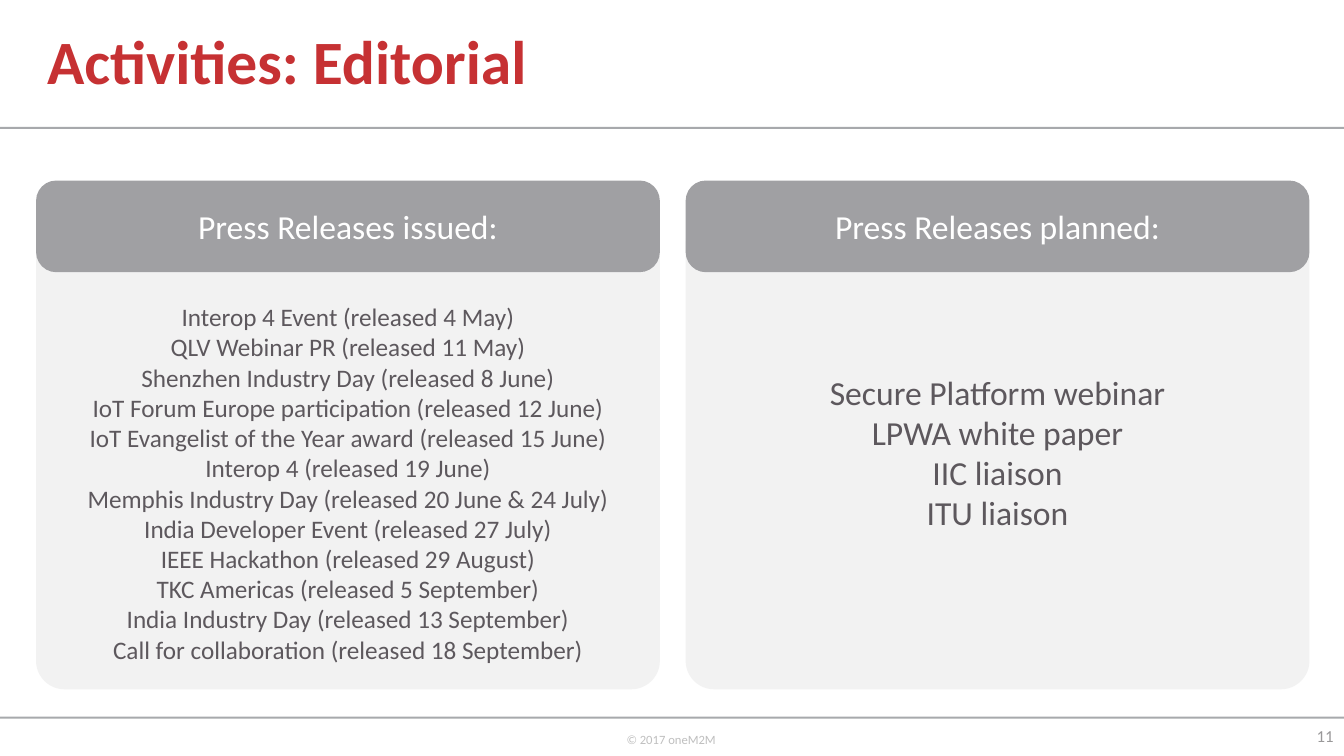
from dataclasses import dataclass

from pptx import Presentation
from pptx.dml.color import RGBColor
from pptx.enum.shapes import MSO_SHAPE
from pptx.enum.text import MSO_ANCHOR, PP_ALIGN
from pptx.util import Cm, Pt

FONT = "Calibri"
RED, WHITE, TEXT_GRAY = "C63133", "FFFFFF", "5D585D"
RULE_GRAY, HEADER_GRAY, BODY_GRAY = "A7A9AC", "A0A0A3", "F2F2F2"
PAGE_GRAY, COPYRIGHT_GRAY = "999899", "BFBFBF"

SLIDE_WIDTH, SLIDE_HEIGHT = 33.87, 19.05
CARD_LEFT, CARD_STEP, CARD_WIDTH = 0.91, 16.37, 15.72
HEADER_TOP, HEADER_HEIGHT = 4.55, 2.31
BODY_TOP, BODY_HEIGHT = 5.41, 11.96


@dataclass
class Box:
    """Position and size in centimetres."""
    left: float
    top: float
    width: float
    height: float

    def lengths(self):
        return Cm(self.left), Cm(self.top), Cm(self.width), Cm(self.height)


@dataclass
class TextStyle:
    size: float
    color: str
    bold: bool = False
    align: PP_ALIGN = PP_ALIGN.CENTER
    anchor: MSO_ANCHOR = MSO_ANCHOR.MIDDLE
    wrap: bool = True
    line_spacing: float = 1.0
    margin_top: float = 0.13


@dataclass
class Card:
    heading: str
    lines: list[str]
    body_style: TextStyle


def rgb(color: str) -> RGBColor:
    return RGBColor.from_string(color)


def set_attributes(target, values: dict) -> None:
    for name, value in values.items():
        setattr(target, name, value)


def write_lines(shape, lines: list[str], style: TextStyle) -> None:
    frame = shape.text_frame
    set_attributes(frame, {
        "word_wrap": style.wrap,
        "vertical_anchor": style.anchor,
        "margin_top": Cm(style.margin_top),
    })
    frame.text = "\n".join(lines)
    for paragraph in frame.paragraphs:
        set_attributes(paragraph, {
            "alignment": style.align,
            "line_spacing": style.line_spacing,
        })
        set_attributes(paragraph.font, {
            "name": FONT, "size": Pt(style.size), "bold": style.bold,
        })
        paragraph.font.color.rgb = rgb(style.color)


def add_filled_shape(slide, kind: MSO_SHAPE, box: Box, color: str):
    shape = slide.shapes.add_shape(kind, *box.lengths())
    shape.shadow.inherit = False
    shape.fill.solid()
    shape.fill.fore_color.rgb = rgb(color)
    shape.line.fill.background()
    return shape


def add_text(slide, box: Box, text: str, style: TextStyle) -> None:
    write_lines(slide.shapes.add_textbox(*box.lengths()), [text], style)


def add_panel(slide, box: Box, corner: float, color: str,
              lines: list[str], style: TextStyle) -> None:
    """Add a rounded rectangle holding centred lines."""
    panel = add_filled_shape(slide, MSO_SHAPE.ROUNDED_RECTANGLE, box, color)
    panel.adjustments[0] = corner
    write_lines(panel, lines, style)


def add_card(slide, card: Card, left: float) -> None:
    add_panel(slide, Box(left, BODY_TOP, CARD_WIDTH, BODY_HEIGHT), 0.06,
              BODY_GRAY, card.lines, card.body_style)
    add_panel(slide, Box(left, HEADER_TOP, CARD_WIDTH, HEADER_HEIGHT), 0.22,
              HEADER_GRAY, [card.heading], TextStyle(24, WHITE))


CARDS = [
    Card("Press Releases issued:", [
        "Interop 4 Event (released 4 May)",
        "QLV Webinar PR (released 11 May)",
        "Shenzhen Industry Day (released 8 June)",
        "IoT Forum Europe participation (released 12 June)",
        "IoT Evangelist of the Year award (released 15 June)",
        "Interop 4 (released 19 June)",
        "Memphis Industry Day (released 20 June & 24 July)",
        "India Developer Event (released 27 July)",
        "IEEE Hackathon (released 29 August)",
        "TKC Americas (released 5 September)",
        "India Industry Day (released 13 September)",
        "Call for collaboration (released 18 September)",
    ], TextStyle(18, TEXT_GRAY, margin_top=1.68)),
    Card("Press Releases planned:", [
        "Secure Platform webinar",
        "LPWA white paper",
        "IIC liaison",
        "ITU liaison",
    ], TextStyle(24, TEXT_GRAY)),
]


def main() -> None:
    presentation = Presentation()
    presentation.slide_width = Cm(SLIDE_WIDTH)
    presentation.slide_height = Cm(SLIDE_HEIGHT)
    slide = presentation.slides.add_slide(presentation.slide_layouts[6])

    for rule_top in (3.2, 18.06):
        add_filled_shape(slide, MSO_SHAPE.RECTANGLE,
                         Box(0, rule_top, SLIDE_WIDTH, 0.05), RULE_GRAY)
    add_text(slide, Box(15.54, 18.31, 2.79, 1.02), "© 2017 oneM2M",
             TextStyle(9, COPYRIGHT_GRAY, align=PP_ALIGN.LEFT,
                       anchor=MSO_ANCHOR.TOP, wrap=False))
    add_text(slide, Box(0.94, 0, 21.82, 3.25), "Activities: Editorial",
             TextStyle(44, RED, bold=True, align=PP_ALIGN.LEFT,
                       line_spacing=0.9))
    add_text(slide, Box(32.49, 18.03, 1.37, 1.02), "11",
             TextStyle(12, PAGE_GRAY, align=PP_ALIGN.RIGHT))
    for index, card in enumerate(CARDS):
        add_card(slide, card, CARD_LEFT + index * CARD_STEP)

    presentation.save("out.pptx")


if __name__ == "__main__":
    main()
